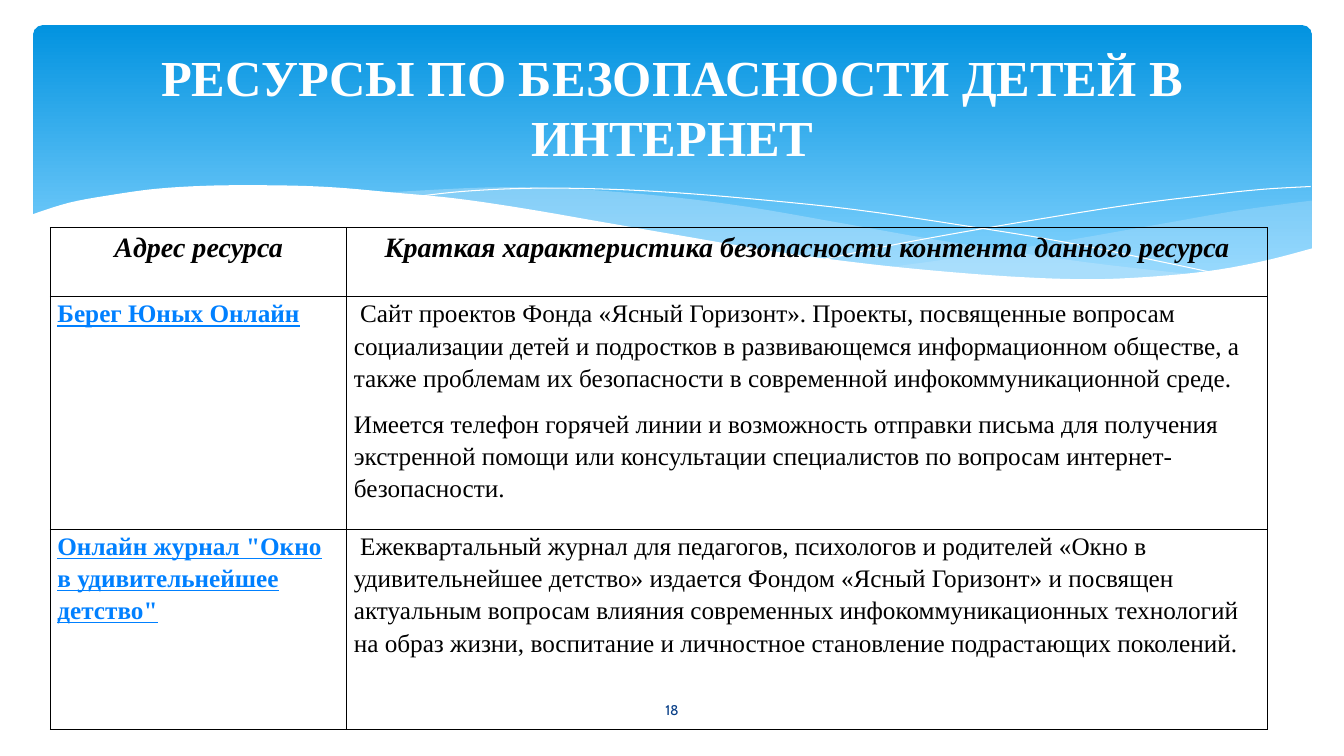
from lxml.etree import SubElement
from pptx import Presentation
from pptx.dml.color import RGBColor
from pptx.enum.shapes import MSO_SHAPE as Preset
from pptx.enum.text import MSO_ANCHOR as Anchor, PP_ALIGN as Align
from pptx.oxml.ns import qn
from pptx.util import Inches, Pt

SERIF = "Times New Roman"
CURVE_STEPS = 5
HEADER = {"size": Pt(20), "name": SERIF, "bold": True, "italic": True}
LINK = {"size": Pt(18), "name": SERIF, "bold": True, "underline": True}
BODY = {"size": Pt(18), "name": SERIF}

# Each wave: curves joined in order, fill colour, opacity in percent
WAVES = [
    ([[(13.01, 1.99), (12.27, 2.09), (11.47, 2.23), (10.38, 2.42), (9.41, 2.57), (8.82, 2.65)],
      [(8.82, 2.65), (9.58, 2.72), (10.41, 2.77), (11.13, 2.77), (11.86, 2.72),
       (12.47, 2.61), (13.01, 2.47)]], "C6E7FC", 29),
    ([[(11.9, 2.73), (10.76, 2.6), (9.41, 2.4), (8.38, 2.22), (7.4, 2.05), (6.52, 1.94),
       (5.6, 1.87), (4.82, 1.86), (3.82, 1.91)],
      [(3.82, 1.91), (4.56, 1.99), (5.39, 2.11), (5.99, 2.22), (7.06, 2.4), (8.02, 2.55),
       (9.07, 2.68), (9.98, 2.76), (10.9, 2.78), (11.9, 2.73)]], "C6E7FC", 40),
]
THIN_CURVES = [
    [(4.13, 1.95), (4.58, 1.9), (5.16, 1.87), (5.77, 1.87), (6.52, 1.9), (7.42, 1.97),
     (8.48, 2.08), (9.7, 2.26), (10.6, 2.41), (11.58, 2.61), (12.1, 2.72)],
    [(8.18, 2.57), (8.96, 2.41), (9.97, 2.23), (11.15, 2.04), (11.94, 1.94),
     (12.5, 1.88), (13, 1.85)],
]
WHITE_WAVE = [
    [(13.03, 2.46), (12.53, 2.59), (11.98, 2.69), (11.34, 2.75), (10.78, 2.77), (10.15, 2.75),
     (9.44, 2.7), (8.63, 2.62), (7.72, 2.5), (6.71, 2.33), (5.96, 2.2), (5.21, 2.07),
     (4.53, 1.97), (3.9, 1.91), (3.33, 1.86), (2.82, 1.84), (2.14, 1.84), (1.58, 1.87),
     (1.13, 1.93), (0.69, 2.01), (0.31, 2.13)],
    [(0.31, 3.29), (13.03, 3.29)],
]

# Cell: list of paragraphs, format, colour, alignment, first-line indent in points
ROWS = [
    [(["Адрес ресурса"], HEADER, "000000", Align.CENTER, 0),
     (["Краткая характеристика безопасности контента данного ресурса"],
      HEADER, "000000", Align.CENTER, 0)],
    [(["Берег Юных Онлайн"], LINK, "0080FF", Align.LEFT, 0),
     (["Сайт проектов Фонда «Ясный Горизонт». Проекты, посвященные вопросам социализации "
       "детей и подростков в развивающемся информационном обществе, а также проблемам их "
       "безопасности в современной инфокоммуникационной среде.",
       "Имеется телефон горячей линии и возможность отправки письма для получения экстренной "
       "помощи или консультации специалистов по вопросам интернет-безопасности."],
      BODY, "000000", Align.LEFT, 4.5)],
    [(['Онлайн журнал "Окно в удивительнейшее детство"'], LINK, "0080FF", Align.LEFT, 0),
     (["Ежеквартальный журнал для педагогов, психологов и родителей «Окно в удивительнейшее "
       "детство» издается Фондом «Ясный Горизонт» и посвящен актуальным вопросам влияния "
       "современных инфокоммуникационных технологий на образ жизни, воспитание и личностное "
       "становление подрастающих поколений."], BODY, "000000", Align.LEFT, 4.5)],
]


def color(value):
    return RGBColor.from_string(value)


def set_attributes(target, values):
    for name, value in values.items():
        setattr(target, name, value)


def smooth_curve(knots):
    """Points of a Catmull-Rom curve through the knots."""
    padded = [knots[0], *knots, knots[-1]]
    points = [knots[0]]
    for a, b, c, d in zip(padded, padded[1:], padded[2:], padded[3:]):
        for step in range(1, CURVE_STEPS + 1):
            t = step / CURVE_STEPS
            points.append(tuple(
                (2 * q + (r - p) * t + (2 * p - 5 * q + 4 * r - s) * t ** 2
                 + (3 * q - p - 3 * r + s) * t ** 3) / 2
                for p, q, r, s in zip(a, b, c, d)))
    return points


def add_outline(slide, points, close):
    (start_x, start_y), *rest = [(Inches(x), Inches(y)) for x, y in points]
    builder = slide.shapes.build_freeform(start_x, start_y)
    builder.add_line_segments(rest, close=close)
    shape = builder.convert_to_shape()
    shape.shadow.inherit = False
    return shape


def add_wave(slide, curves, fill, opacity=100):
    points = [point for curve in curves for point in smooth_curve(curve)]
    shape = add_outline(slide, points, True)
    shape.fill.solid()
    shape.fill.fore_color.rgb = color(fill)
    shape.line.fill.background()
    if opacity < 100:
        color_element = shape._element.spPr.find(qn("a:solidFill"))[0]
        SubElement(color_element, qn("a:alpha"), val=str(opacity * 1000))


def add_thin_curve(slide, knots):
    shape = add_outline(slide, smooth_curve(knots), False)
    shape.fill.background()
    shape.line.color.rgb = color("FFFFFF")
    shape.line.width = Pt(0)


def add_banner(slide):
    banner = slide.shapes.add_shape(Preset.ROUNDED_RECTANGLE, Inches(0.33), Inches(0.25),
                                    Inches(12.68), Inches(2.7))
    banner.adjustments[0] = 0.034
    banner.shadow.inherit = False
    banner.line.fill.background()
    banner.fill.gradient()
    banner.fill.gradient_angle = 270
    stops = [(0, "0293E0"), (0.9, "83D3FE")]
    for stop, (position, value) in zip(banner.fill.gradient_stops, stops):
        stop.position = position
        stop.color.rgb = color(value)


def write(paragraph, text, font_format, font_color):
    run = paragraph.add_run()
    run.text = text
    set_attributes(run.font, font_format)
    run.font.color.rgb = color(font_color)


def add_text(slide, box, text, font_format, font_color):
    frame = slide.shapes.add_textbox(*map(Inches, box)).text_frame
    set_attributes(frame, {"word_wrap": True, "vertical_anchor": Anchor.MIDDLE})
    frame.paragraphs[0].alignment = Align.CENTER
    write(frame.paragraphs[0], text, font_format, font_color)


def add_borders(cell):
    properties = cell._tc.get_or_add_tcPr()
    for index, side in enumerate(("lnL", "lnR", "lnT", "lnB")):
        line = properties.makeelement(qn("a:" + side), {"w": str(Pt(1))})
        fill = SubElement(line, qn("a:solidFill"))
        SubElement(fill, qn("a:srgbClr"), val="000000")
        properties.insert(index, line)


def fill_cell(cell, texts, font_format, font_color, alignment, indent):
    set_attributes(cell, {"margin_left": Inches(0.07), "margin_right": Inches(0.07),
                          "margin_top": 0, "margin_bottom": 0})
    cell.fill.background()
    add_borders(cell)
    frame = cell.text_frame
    for index, text in enumerate(texts):
        paragraph = frame.add_paragraph() if index else frame.paragraphs[0]
        set_attributes(paragraph, {"alignment": alignment, "line_spacing": 1.15,
                                   "space_after": Pt(10)})
        if indent and index == 0:
            paragraph._p.get_or_add_pPr().set("indent", str(Pt(indent)))
        write(paragraph, text, font_format, font_color)


def add_resource_table(slide):
    table = slide.shapes.add_table(3, 2, Inches(0.5), Inches(2.26),
                                   Inches(12.07), Inches(4.98)).table
    set_attributes(table, {"first_row": False, "horz_banding": False})
    for column, width in zip(table.columns, (2.94, 9.13)):
        column.width = Inches(width)
    for row, height, contents in zip(table.rows, (0.68, 2.31, 1.99), ROWS):
        row.height = Inches(height)
        for cell, content in zip(row.cells, contents):
            fill_cell(cell, *content)


def main():
    presentation = Presentation()
    presentation.slide_width, presentation.slide_height = Inches(13.33), Inches(7.5)
    slide = presentation.slides.add_slide(presentation.slide_layouts[6])

    # Banner with waves
    add_banner(slide)
    for wave in WAVES:
        add_wave(slide, *wave)
    for knots in THIN_CURVES:
        add_thin_curve(slide, knots)
    add_wave(slide, WHITE_WAVE, "FFFFFF")

    # Table, title and slide number
    add_resource_table(slide)
    add_text(slide, (0.67, 0.37, 12, 1.37), "РЕСУРСЫ ПО БЕЗОПАСНОСТИ ДЕТЕЙ В ИНТЕРНЕТ",
             {"size": Pt(36), "name": SERIF, "bold": True}, "FFFFFF")
    add_text(slide, (5.82, 6.84, 1.69, 0.4), "18", {"size": Pt(10), "name": "Cabin"}, "073E87")
    presentation.save("out.pptx")


if __name__ == "__main__":
    main()
